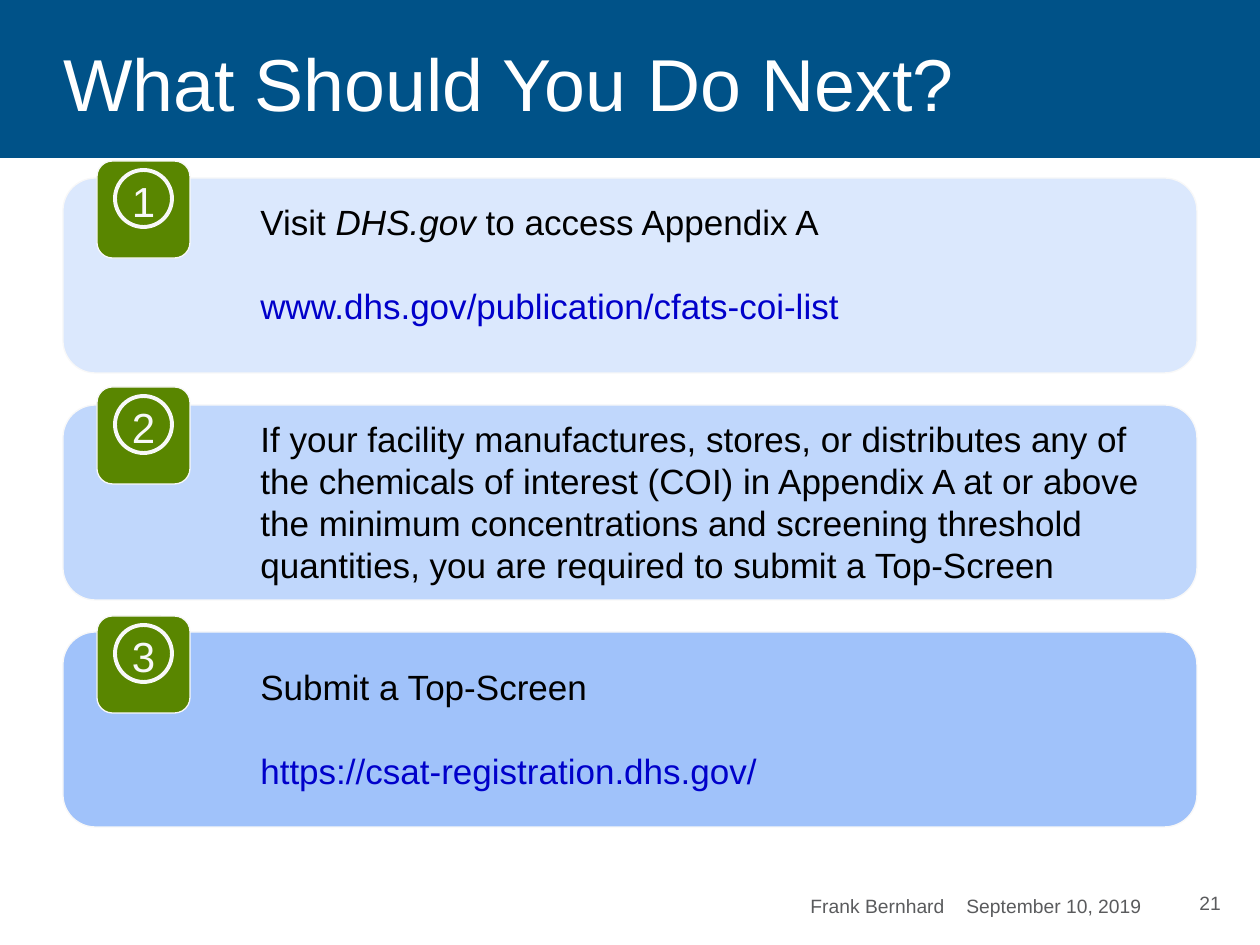
from lxml.etree import SubElement
from pptx import Presentation
from pptx.dml.color import RGBColor
from pptx.enum.shapes import MSO_SHAPE
from pptx.enum.text import MSO_ANCHOR, MSO_AUTO_SIZE, PP_ALIGN
from pptx.oxml.ns import qn
from pptx.util import Emu, Pt

PX = 914400 / 126
COLORS = {
    "bar": "005288", "white": "FFFFFF", "text": "000000", "link": "0000CA",
    "badge": "598600", "edge": "F8F8F8", "footer": "5A5B5D",
}


def px(*values):
    return [Emu(round(v * PX)) for v in values]


def add_run(p, text, size, color, italic=False):
    r = p.add_run()
    r.text = text
    fmt = {"name": "Arial", "size": Pt(size), "italic": italic}
    for key, value in fmt.items():
        setattr(r.font, key, value)
    r.font.color.rgb = RGBColor.from_string(COLORS[color])


prs = Presentation()
prs.slide_width, prs.slide_height = px(1260, 945)
s = prs.slides.add_slide(prs.slide_layouts[5])

title = s.shapes.title
title.left, title.top, title.width, title.height = px(0, 0, 1260, 158)
title.fill.solid()
title.fill.fore_color.rgb = RGBColor.from_string(COLORS["bar"])
tf = title.text_frame
tf.auto_size = MSO_AUTO_SIZE.NONE
tf.vertical_anchor = MSO_ANCHOR.TOP
tf.margin_left, tf.margin_top, tf.margin_right, tf.margin_bottom = px(63, 38, 13, 13)
p = tf.paragraphs[0]
p.alignment = PP_ALIGN.LEFT
add_run(p, "What Should You Do Next?", 42, "white")

for left, top, width, height, text in [
    (798, 882, 483, 42, "Frank Bernhard\tSeptember 10, 2019"),
    (1187, 886, 63, 35, "21"),
]:
    tf = s.shapes.add_textbox(*px(left, top, width, height)).text_frame
    tf.word_wrap = True
    tf.vertical_anchor = MSO_ANCHOR.BOTTOM
    p = tf.paragraphs[0]
    if "\t" in text:
        tabs = SubElement(p._p.get_or_add_pPr(), qn("a:tabLst"))
        SubElement(tabs, qn("a:tab"), pos=str(px(156)[0]), algn="l")
    add_run(p, text, 11, "footer")

steps = [
    {"fill": "DBE8FD", "badge": 161, "box": (194, 932, 165), "lines": [
        [("Visit ", "text", False), ("DHS.gov", "text", True),
         (" to access Appendix A", "text", False)],
        [("www.dhs.gov/publication/cfats-coi-list", "link", False)]]},
    {"fill": "C0D7FC", "badge": 387, "box": (411, 926, 183), "lines": [
        [("If your facility manufactures, stores, or distributes any of the "
          "chemicals of interest (COI) in Appendix A at or above the minimum "
          "concentrations and screening threshold quantities, you are required "
          "to submit a Top-Screen", "text", False)]]},
    {"fill": "A0C2FA", "badge": 616, "box": (659, 766, 140), "lines": [
        [("Submit a Top-Screen", "text", False)],
        [("https://csat-registration.dhs.gov/", "link", False)]]},
]

for i, step in enumerate(steps):
    badge_top = step["badge"]
    shapes = [
        (MSO_SHAPE.ROUNDED_RECTANGLE, (63, 178 + 227 * i, 1134, 195), step["fill"], 0.75),
        (MSO_SHAPE.ROUNDED_RECTANGLE, (97, badge_top, 93, 97), COLORS["badge"], 0.75),
        (MSO_SHAPE.OVAL, (115, badge_top + 9, 57, 57), None, 2.25),
    ]
    for kind, place, fill, weight in shapes:
        sp = s.shapes.add_shape(kind, *px(*place))
        sp.shadow.inherit = False
        if fill:
            sp.fill.solid()
            sp.fill.fore_color.rgb = RGBColor.from_string(fill)
        else:
            sp.fill.background()
        sp.line.color.rgb = RGBColor.from_string(COLORS["edge"])
        sp.line.width = Pt(weight)
        if fill == COLORS["badge"]:
            tf = sp.text_frame
            tf.vertical_anchor = MSO_ANCHOR.TOP
            tf.margin_top = px(10)[0]
            p = tf.paragraphs[0]
            p.alignment = PP_ALIGN.CENTER
            add_run(p, str(i + 1), 24, "edge")

    top, width, height = step["box"]
    tf = s.shapes.add_textbox(*px(248, top, width, height)).text_frame
    tf.word_wrap = True
    for n, line in enumerate(step["lines"]):
        p = tf.add_paragraph() if n else tf.paragraphs[0]
        p.line_spacing = Pt(24)
        if n < len(step["lines"]) - 1:
            p.space_after = Pt(24)
        for text, color, italic in line:
            add_run(p, text, 20, color, italic)

prs.save("out.pptx")
